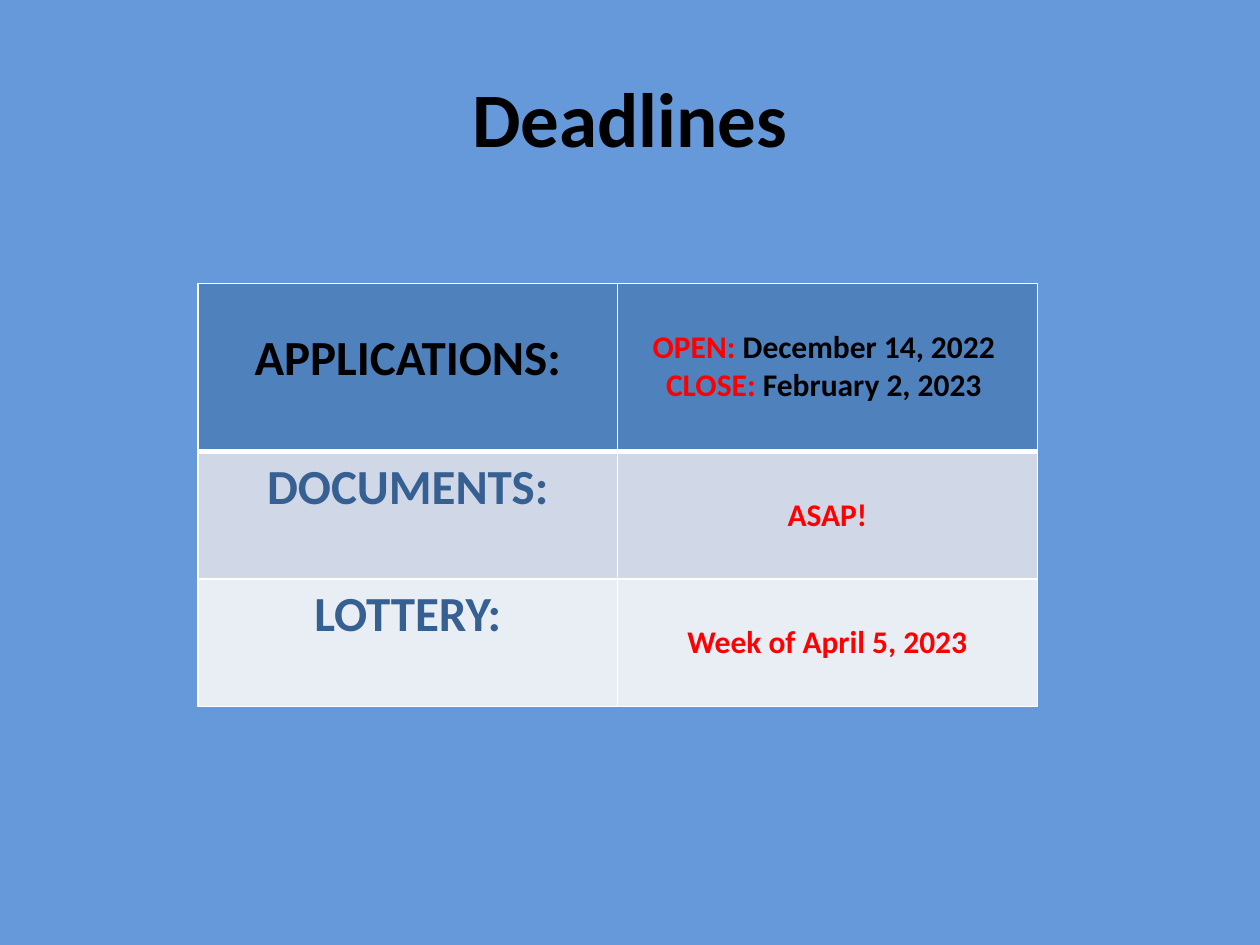
"""Build the deadlines slide with its table of dates."""
from lxml.etree import fromstring
from pptx import Presentation
from pptx.dml.color import RGBColor
from pptx.enum.text import MSO_ANCHOR as Anchor, PP_ALIGN as Align
from pptx.util import Cm, Pt

RED, BLACK, BLUE, WHITE = "FF0000", "000000", "376092", "FFFFFF"
NAMESPACE = "http://schemas.openxmlformats.org/drawingml/2006/main"


def color(value):
    """Turn a hex string into a colour."""
    return RGBColor.from_string(value)


def add_span(para, text, size, value):
    """Append bold Calibri text to a paragraph."""
    span = para.add_run()
    span.text = text
    span.font.name = "Calibri"
    span.font.size = Pt(size)
    span.font.bold = True
    span.font.color.rgb = color(value)


deck = Presentation()
deck.slide_width, deck.slide_height = Cm(25.4), Cm(19.05)
slide = deck.slides.add_slide(deck.slide_layouts[5])
slide.background.fill.solid()
slide.background.fill.fore_color.rgb = color("6699DA")

title = slide.shapes.title
title.left, title.top, title.width, title.height = Cm(1.27), Cm(0.76), Cm(22.86), Cm(3.18)
title.text_frame.vertical_anchor = Anchor.MIDDLE
title_para = title.text_frame.paragraphs[0]
title_para.alignment = Align.CENTER
add_span(title_para, "Deadlines", 44, BLACK)

rows = [
    (3.38, "4F81BD", BLACK, "APPLICATIONS:",
     [[("OPEN: ", RED), ("December 14, 2022 ", BLACK)],
      [("CLOSE: ", RED), ("February 2, 2023 ", BLACK)]]),
    (2.57, "D0D8E8", BLUE, "DOCUMENTS:", [[("ASAP!", RED)]]),
    (2.57, "E9EDF4", BLUE, "LOTTERY:", [[("Week of April 5, 2023", RED)]]),
]
top_margin, lowered_margin = Cm(0.13), Cm(0.9)

frame = slide.shapes.add_table(len(rows), 2, Cm(3.99), Cm(5.72), Cm(16.92), Cm(8.52))
table = frame.table
table.first_row = table.horz_banding = False
for column in table.columns:
    column.width = Cm(8.46)

for row_index, (height, fill, label_color, label, dates) in enumerate(rows):
    table.rows[row_index].height = Cm(height)
    contents = [(28, [[(label, label_color)]]), (18, dates)]
    for column_index, (size, lines) in enumerate(contents):
        cell = table.cell(row_index, column_index)
        lowered = row_index == 0 or column_index == 1
        cell.margin_top = lowered_margin if lowered else top_margin
        cell.vertical_anchor = Anchor.TOP
        cell.fill.solid()
        cell.fill.fore_color.rgb = color(fill)
        for line_index, line in enumerate(lines):
            text_frame = cell.text_frame
            para = text_frame.add_paragraph() if line_index else text_frame.paragraphs[0]
            para.alignment = Align.CENTER
            for text, value in line:
                add_span(para, text, size, value)
        properties = cell._tc.get_or_add_tcPr()
        for position, side in enumerate("LRTB"):
            thick = (row_index, side) in [(0, "B"), (1, "T")]
            properties.insert(position, fromstring(
                f'<a:ln{side} xmlns:a="{NAMESPACE}" w="{Pt(3 if thick else 1)}">'
                f'<a:solidFill><a:srgbClr val="{WHITE}"/></a:solidFill></a:ln{side}>'))

deck.save("out.pptx")
